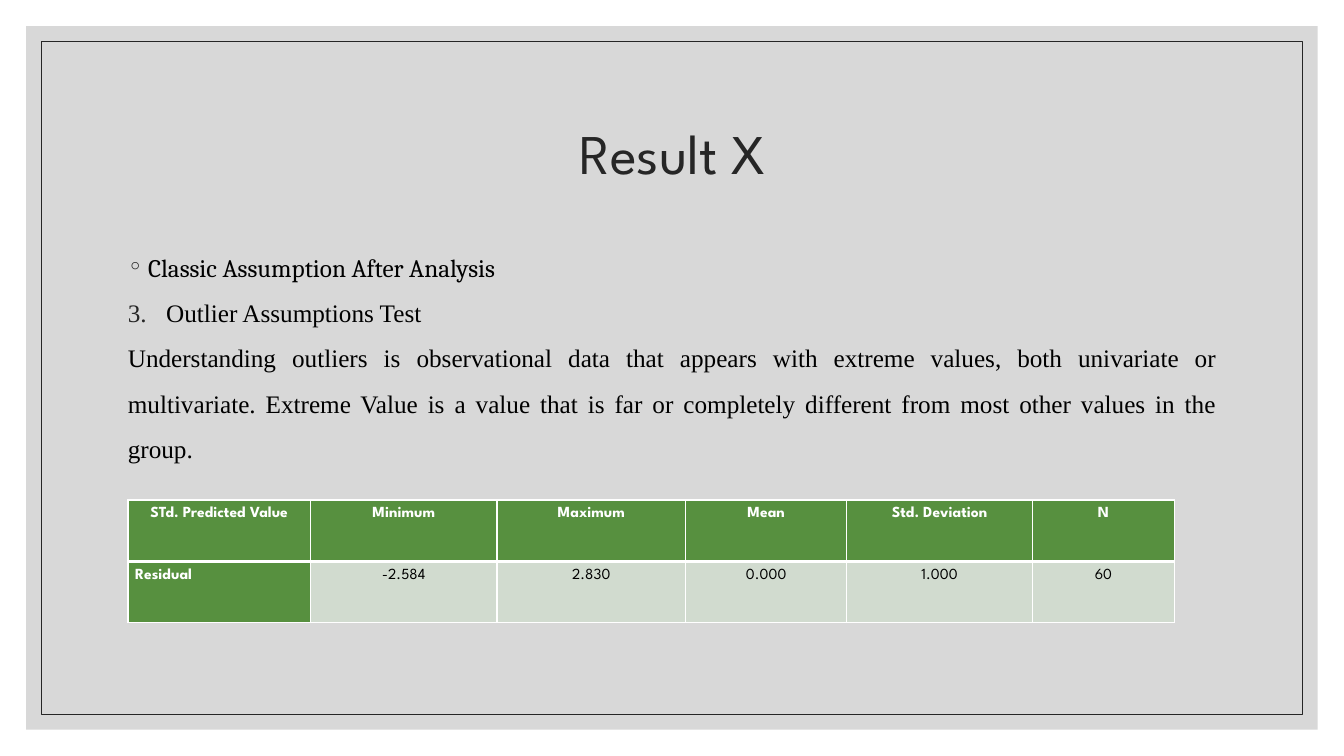
from dataclasses import dataclass
from lxml.etree import SubElement as Sub
from pptx import Presentation as Deck
from pptx.dml.color import RGBColor as Rgb
from pptx.enum.shapes import MSO_SHAPE as Form
from pptx.enum.text import MSO_ANCHOR as Anchor, MSO_AUTO_SIZE as Fit, PP_ALIGN as Align
from pptx.oxml.ns import qn
from pptx.util import Inches, Pt


@dataclass(frozen=True)
class Theme:
    ink: str = "262626"
    black: str = "000000"
    white: str = "FFFFFF"
    gray: str = "BFBFBF"
    green: str = "57903F"
    pale: str = "D1DBCF"
    sans: str = "League Spartan"
    serif: str = "Times New Roman"
    lead: str = "Cambria"
    head: int = 40
    body: int = 18
    small: int = 11


def write(para, text, font, size, color, bold=False, align=Align.CENTER, space=1.5):
    para.alignment, para.line_spacing = align, space
    para.space_before = para.space_after = Pt(0)
    run = para.add_run()
    run.text = text
    run.font.name, run.font.size, run.font.bold = font, Pt(size), bold
    run.font.color.rgb = Rgb.from_string(color)


def tint(parent, color):
    fill = Sub(parent, qn("a:solidFill"))
    return Sub(fill, qn("a:srgbClr"), val=color)


class Page:
    """Draws styled elements on one slide."""

    def __init__(self, deck, theme):
        self.theme = theme
        self.slide = deck.slides.add_slide(deck.slide_layouts[5])
        self.shapes = self.slide.shapes

    def panel(self, edge, fill=None, alpha=100, line=None):
        size = Inches(13.33 - 2 * edge), Inches(7.5 - 2 * edge)
        rect = self.shapes.add_shape(Form.RECTANGLE, Inches(edge), Inches(edge), *size)
        rect.shadow.inherit = False
        if fill:
            rect.fill.solid()
            rect.fill.fore_color.rgb = Rgb.from_string(fill)
            color = rect.fill._xPr.find(qn("a:solidFill"))[0]
            Sub(color, qn("a:alpha"), val=str(alpha * 1000))
        else:
            rect.fill.background()
        if line:
            rect.line.color.rgb = Rgb.from_string(line)
            rect.line.width = Pt(0.5)
        else:
            rect.line.fill.background()

    def title(self, text, left, top, width, height):
        box = self.shapes.title
        box.left, box.top = Inches(left), Inches(top)
        box.width, box.height = Inches(width), Inches(height)
        frame = box.text_frame
        frame.vertical_anchor, frame.auto_size = Anchor.MIDDLE, Fit.NONE
        style = self.theme
        write(frame.paragraphs[0], text, style.sans, style.head, style.ink, space=0.9)
        self.shapes._spTree.append(box._element)

    def body(self, items, left, top, width, height):
        box = self.shapes.add_textbox(*map(Inches, (left, top, width, height)))
        frame = box.text_frame
        frame.word_wrap = True
        for i, (text, font, indent, mark) in enumerate(items):
            para = frame.add_paragraph() if i else frame.paragraphs[0]
            write(para, text, font, self.theme.body, self.theme.black, align=Align.JUSTIFY)
            if mark:
                self.bullet(para, font, indent, *mark)

    def bullet(self, para, font, indent, kind, **attrs):
        props = para._p.get_or_add_pPr()
        props.set("marL", str(Inches(indent)))
        props.set("indent", str(-Inches(indent)))
        color = Sub(props, qn("a:buClr"))
        Sub(color, qn("a:srgbClr"), val=self.theme.ink)
        Sub(props, qn("a:buFont"), typeface=font)
        tag, marks = kind
        Sub(props, qn(tag), **marks)

    def table(self, rows, widths, left, top, height):
        size = Inches(sum(widths)), Inches(height * len(rows))
        grid = self.shapes.add_table(
            len(rows), len(widths), Inches(left), Inches(top), *size).table
        for col, width in zip(grid.columns, widths):
            col.width = Inches(width)
        for r, row in enumerate(rows):
            grid.rows[r].height = Inches(height)
            for c, text in enumerate(row):
                self.cell(grid.cell(r, c), text, r, c)

    def cell(self, cell, text, r, c):
        style = self.theme
        head = r == 0 or c == 0
        cell.margin_left = cell.margin_right = Inches(0.07)
        cell.margin_top = cell.margin_bottom = 0
        write(cell.text_frame.paragraphs[0], text, style.sans, style.small,
              style.white if head else style.black, bold=head,
              align=Align.LEFT if r and not c else Align.CENTER)
        props = cell._tc.get_or_add_tcPr()
        thick = "a:lnT" if r else "a:lnB"
        for side in ("a:lnL", "a:lnR", "a:lnT", "a:lnB"):
            line = Sub(props, qn(side), w=str(Pt(3 if side == thick else 1)))
            tint(line, style.white)
        cell.fill.solid()
        cell.fill.fore_color.rgb = Rgb.from_string(style.green if head else style.pale)


def main():
    deck = Deck()
    deck.slide_width, deck.slide_height = Inches(13.33), Inches(7.5)
    style = Theme()
    page = Page(deck, style)
    page.panel(0.26, fill=style.gray, alpha=60)
    page.panel(0.41, line=style.ink)
    page.title("Result X", 1.17, 0.8, 11, 1.5)
    dot = ("a:buChar", {"char": "◦"})
    count = ("a:buAutoNum", {"type": "arabicPeriod", "startAt": "3"})
    page.body([
        ("Classic Assumption After Analysis", style.lead, 0.2, [dot]),
        ("Outlier Assumptions Test", style.serif, 0.38, [count]),
        ("Understanding outliers is observational data that appears with extreme values, "
         "both univariate or multivariate. Extreme Value is a value that is far or "
         "completely different from most other values in the group.", style.serif, 0, None),
    ], 1.17, 2.3, 11, 4.21)
    page.table([
        ["STd. Predicted Value", "Minimum", "Maximum", "Mean", "Std. Deviation", "N"],
        ["Residual", "-2.584", "2.830", "0.000", "1.000", "60"],
    ], [1.81, 1.85, 1.87, 1.6, 1.84, 1.41], 1.27, 4.96, 0.61)
    deck.save("out.pptx")


if __name__ == "__main__":
    main()
